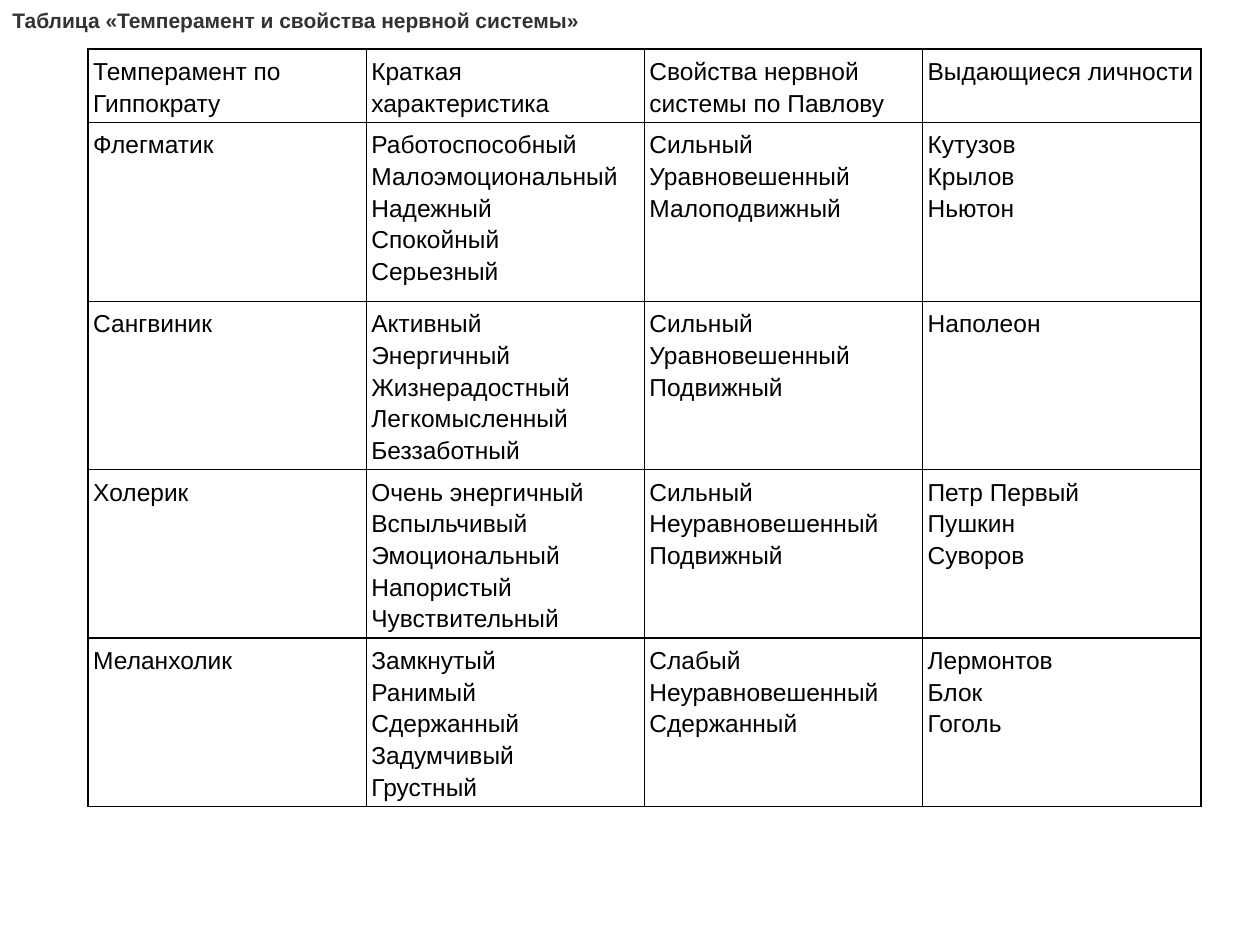
from lxml import etree
from pptx import Presentation
from pptx import util as u
from pptx.dml.color import RGBColor
from pptx.enum import text
from pptx.oxml.ns import qn

BLACK = RGBColor(0x00, 0x00, 0x00)
DARK_GREY = RGBColor(0x33, 0x33, 0x33)
FONT = "Arial"
BODY_SIZE = u.Pt(14)
CELL_MARGIN = u.Inches(0.04)

TITLE = "Таблица «Темперамент и свойства нервной системы»"
ROW_HEIGHTS = [0.54, 1.42, 1.2, 1.2, 1.2]
# Each cell is a list of lines.
ROWS = [
    [["Темперамент по Гиппократу"], ["Краткая характеристика"],
     ["Свойства нервной системы по Павлову"], ["Выдающиеся личности"]],
    [["Флегматик"],
     ["Работоспособный", "Малоэмоциональный", "Надежный", "Спокойный", "Серьезный"],
     ["Сильный", "Уравновешенный", "Малоподвижный"],
     ["Кутузов", "Крылов", "Ньютон"]],
    [["Сангвиник"],
     ["Активный", "Энергичный", "Жизнерадостный", "Легкомысленный", "Беззаботный"],
     ["Сильный", "Уравновешенный", "Подвижный"],
     ["Наполеон"]],
    [["Холерик"],
     ["Очень энергичный", "Вспыльчивый", "Эмоциональный", "Напористый", "Чувствительный"],
     ["Сильный", "Неуравновешенный", "Подвижный"],
     ["Петр Первый", "Пушкин", "Суворов"]],
    [["Меланхолик"],
     ["Замкнутый", "Ранимый", "Сдержанный", "Задумчивый", "Грустный"],
     ["Слабый", "Неуравновешенный", "Сдержанный"],
     ["Лермонтов", "Блок", "Гоголь"]],
]


def format_runs(para, size, color, bold=False):
    for span in para.runs:
        span.font.name = FONT
        span.font.size = size
        span.font.bold = bold
        span.font.color.rgb = color


def add_title(page, left, top, width, height):
    box = page.shapes.add_textbox(left, top, width, height)
    frame = box.text_frame
    frame.word_wrap = False
    frame.vertical_anchor = text.MSO_ANCHOR.TOP
    frame.margin_top = u.Inches(0.06)
    frame.text = TITLE
    format_runs(frame.paragraphs[0], u.Pt(12), DARK_GREY, bold=True)


def add_borders(cell):
    properties = cell._tc.get_or_add_tcPr()
    for side in ("a:lnL", "a:lnR", "a:lnT", "a:lnB"):
        line = etree.SubElement(properties, qn(side), w=str(u.Pt(1)))
        fill = etree.SubElement(line, qn("a:solidFill"))
        etree.SubElement(fill, qn("a:srgbClr"), val=str(BLACK))


def fill_cell(cell, lines):
    cell.margin_left = cell.margin_right = CELL_MARGIN
    cell.margin_top = cell.margin_bottom = CELL_MARGIN
    add_borders(cell)
    cell.fill.background()
    para = cell.text_frame.paragraphs[0]
    para.text = "\v".join(lines)
    para.line_spacing = 1.15
    format_runs(para, BODY_SIZE, BLACK)
    # Line breaks need the body size too, or they stretch the line.
    for line_break in para._p.findall(qn("a:br")):
        etree.SubElement(line_break, qn("a:rPr"), sz=str(int(BODY_SIZE.pt * 100)))


def add_temperament_table(page, left, top, width, height):
    column_count = len(ROWS[0])
    graphic = page.shapes.add_table(len(ROWS), column_count, left, top, width, height)
    table = graphic.table
    for column in table.columns:
        column.width = width // column_count
    for row, row_height, contents in zip(table.rows, ROW_HEIGHTS, ROWS):
        row.height = u.Inches(row_height)
        for cell, lines in zip(row.cells, contents):
            fill_cell(cell, lines)
    graphic.height = height


def main():
    deck = Presentation()
    deck.slide_width, deck.slide_height = u.Inches(10), u.Inches(7.5)
    page = deck.slides.add_slide(deck.slide_layouts[6])
    add_temperament_table(page, u.Inches(0.7), u.Inches(0.39),
                          u.Inches(8.83), u.Inches(6.32))
    add_title(page, u.Inches(0), u.Inches(0), u.Inches(4.74), u.Inches(0.5))
    deck.save("out.pptx")


if __name__ == "__main__":
    main()
